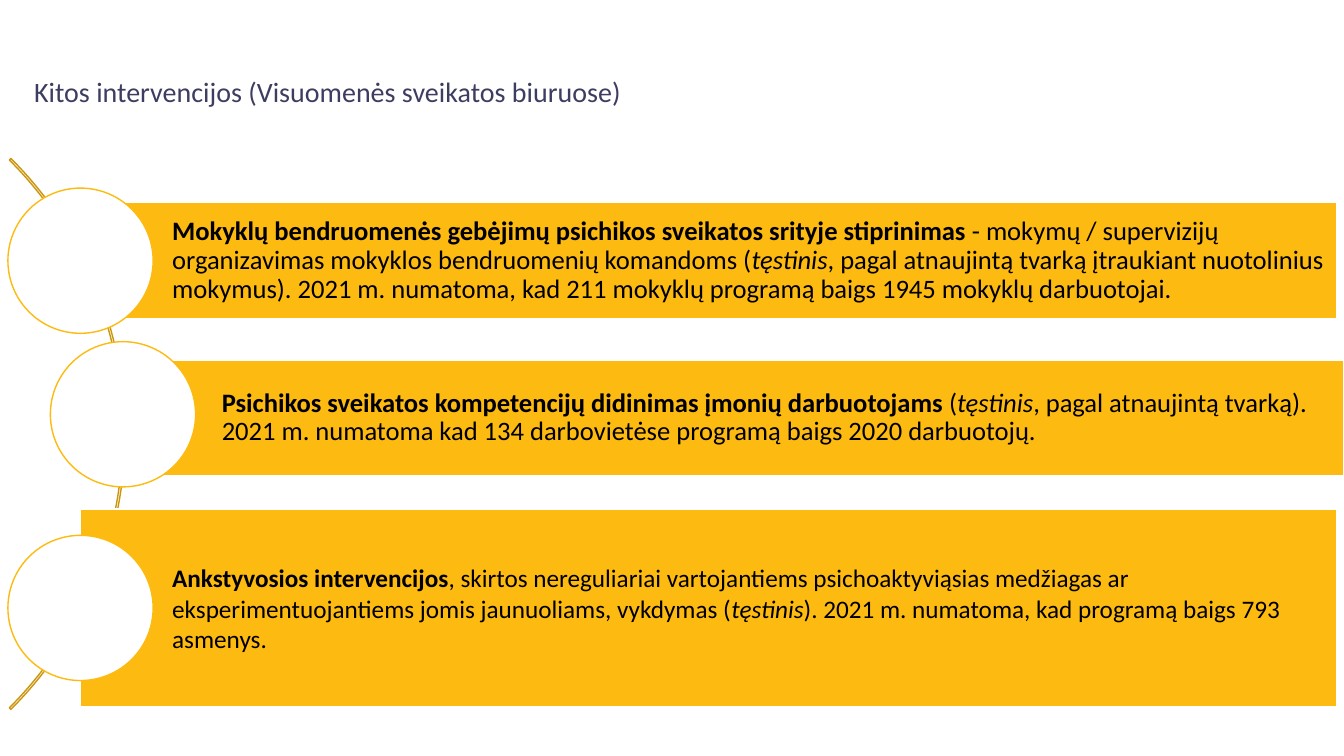
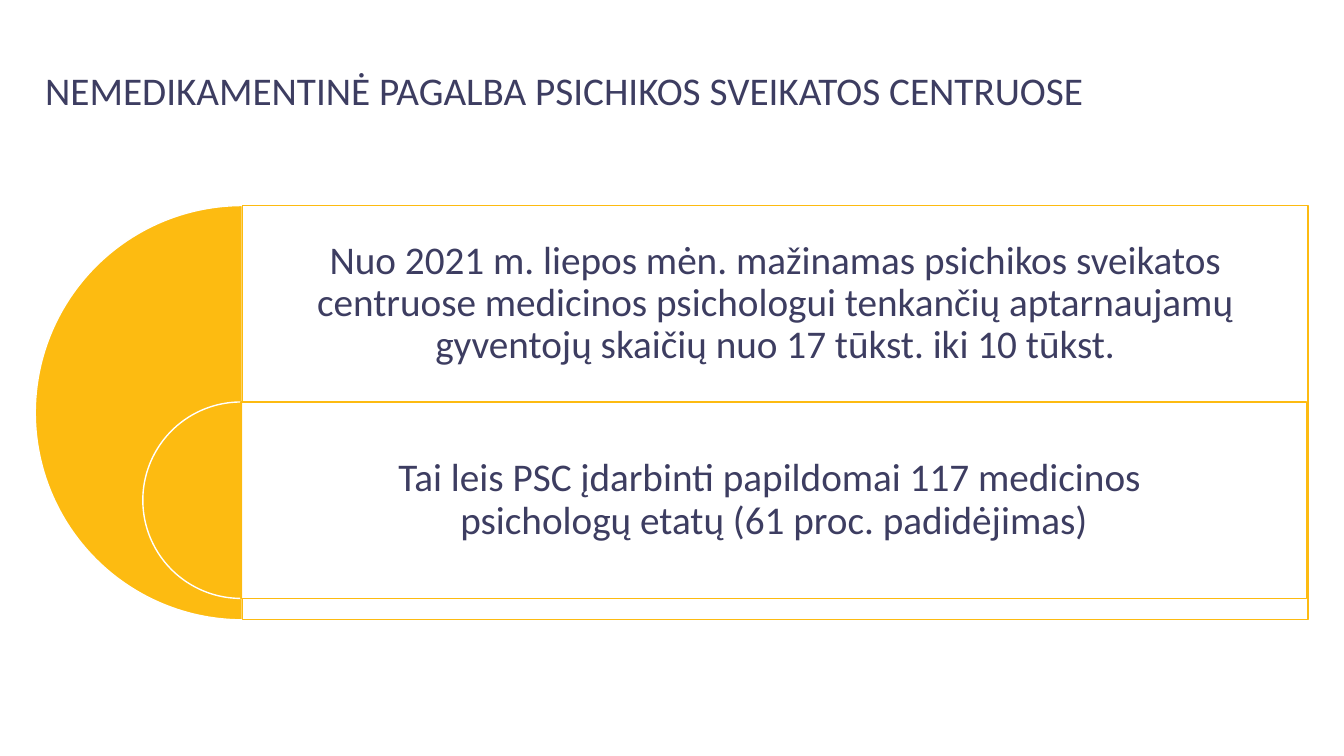
from lxml import etree
from pptx import Presentation
from pptx.dml.color import RGBColor
from pptx.enum.shapes import MSO_SHAPE
from pptx.enum.text import MSO_ANCHOR, PP_ALIGN
from pptx.oxml.ns import qn
from pptx.util import Cm, Pt

ARC = MSO_SHAPE.BLOCK_ARC
PIE = MSO_SHAPE.PIE
RECT = MSO_SHAPE.RECTANGLE
OVAL = MSO_SHAPE.OVAL
TOP = MSO_ANCHOR.TOP
MID = MSO_ANCHOR.MIDDLE
LEFT = PP_ALIGN.LEFT
MIDDLE = PP_ALIGN.CENTER

GOLD = RGBColor(0xFD, 0xBB, 0x11)
OCHRE = RGBColor(0xCB, 0x96, 0x0E)
NAVY = RGBColor(0x3D, 0x3D, 0x61)
BLACK = RGBColor(0, 0, 0)
WHITE = RGBColor(0xFF, 0xFF, 0xFF)
FONT = "Calibri"
WIDE, HIGH = 33.87, 19.05
BOLD, ITALIC = "b", "i"


def place(box):
    return [Cm(side) for side in box]


def add_form(slide, kind, box, fill, line, turns=()):
    form = slide.shapes.add_shape(kind, *place(box))
    form.shadow.inherit = False
    for at, turn in enumerate(turns):
        form.adjustments[at] = turn
    if fill is None:
        form.fill.background()
    else:
        form.fill.solid()
        form.fill.fore_color.rgb = fill
    form.line.color.rgb = line
    form.line.width = Pt(1)
    return form


def write(shape, runs, size, color, align=LEFT, anchor=MID,
          pads=(0.25, 0.13, 0.25, 0.13), space=0.9):
    frame = shape.text_frame
    frame.word_wrap = True
    frame.vertical_anchor = anchor
    (frame.margin_left, frame.margin_top,
     frame.margin_right, frame.margin_bottom) = place(pads)
    para = frame.paragraphs[0]
    para.alignment = align
    para.line_spacing = space
    for text, style in runs:
        if text == "\n":
            para.add_line_break()
            continue
        run = para.add_run()
        run.text = text
        font = run.font
        font.name = FONT
        font.size = Pt(size)
        font.color.rgb = color
        font.bold = style == BOLD
        font.italic = style == ITALIC


def add_title(slide, box, text, size, anchor=MID):
    label = slide.shapes.add_textbox(*place(box))
    write(label, [(text, "")], size, NAVY, anchor=anchor)


def add_bar(slide, box, runs, size, space, shift=(0, 0)):
    left, top, wide, high = box
    bar = add_form(slide, RECT, box, GOLD, WHITE)
    write(bar, runs, size, BLACK, pads=(2.31, 0.13, 0.13, 0.13), space=space)
    disc = 3.66
    spot = (left - disc / 2 + shift[0],
            top + (high - disc) / 2 + shift[1], disc, disc)
    add_form(slide, OVAL, spot, WHITE, GOLD)


def add_level(slide, left, top, side, runs):
    add_form(slide, PIE, (left, top, side, side), GOLD, WHITE, (54, 162))
    panel = add_form(slide, RECT, (left + side / 2, top, 26.85, side),
                     WHITE, GOLD)
    tint = panel.fill._xPr.find(qn("a:solidFill"))[0]
    etree.SubElement(tint, qn("a:alpha")).set("val", "90000")
    pad, depth = 0.3, 4.95
    write(panel, runs, 28, NAVY, MIDDLE,
          pads=(pad, pad, pad, pad + side - depth))


def build_list(slide):
    add_form(slide, ARC, (-16.48, 1.12, 19.63, 19.63), None, OCHRE,
             (189, 27, 0.00279))
    add_bar(slide, (2.03, 5.11, 31.65, 2.92), [
        ("Mokyklų bendruomenės gebėjimų psichikos sveikatos srityje "
         "stiprinimas", BOLD),
        (" - mokymų / supervizijų organizavimas mokyklos bendruomenių "
         "komandoms (", ""),
        ("tęstinis", ITALIC),
        (", pagal atnaujintą tvarką įtraukiant nuotolinius mokymus). "
         "2021 m. numatoma, kad 211 mokyklų programą baigs 1945 mokyklų "
         "darbuotojai.", ""),
    ], 19, 0.9)
    add_bar(slide, (3.28, 9.07, WIDE - 3.28, 2.92), [
        ("Psichikos sveikatos kompetencijų didinimas įmonių darbuotojams",
         BOLD),
        (" (", ""),
        ("tęstinis", ITALIC),
        (", pagal atnaujintą tvarką). 2021 m. numatoma kad 134 "
         "darbovietėse programą baigs 2020 darbuotojų.", ""),
    ], 19, 0.9, (-0.18, -0.09))
    add_bar(slide, (2.03, 12.83, 31.65, 4.98), [
        ("Ankstyvosios intervencijos", BOLD),
        (", skirtos nereguliariai vartojantiems psichoaktyviąsias medžiagas "
         "ar eksperimentuojantiems jomis jaunuoliams, vykdymas (", ""),
        ("tęstinis", ITALIC),
        ("). 2021 m. numatoma, kad programą baigs 793 asmenys.", ""),
    ], 18, 1.0)
    add_title(slide, (0.61, 1.09, 32.08, 2.54),
              "Kitos intervencijos (Visuomenės sveikatos biuruose)", 20)


def build_levels(slide):
    add_level(slide, 0.89, 5.18, 10.44, [
        ("Nuo 2021 m. liepos mėn. mažinamas psichikos sveikatos centruose "
         "medicinos psichologui tenkančių aptarnaujamų gyventojų skaičių "
         "nuo 17 tūkst. iki 10 tūkst.", ""),
    ])
    add_level(slide, 3.6, 10.13, 4.95, [
        ("Tai leis PSC įdarbinti papildomai 117 medicinos ", ""),
        ("\n", ""),
        ("psichologų etatų (61 proc. padidėjimas)", ""),
    ])
    add_title(slide, (0.89, 1.68, 32.08, 2.46),
              "NEMEDIKAMENTINĖ PAGALBA PSICHIKOS SVEIKATOS CENTRUOSE",
              28, TOP)


def main():
    deck = Presentation()
    deck.slide_width, deck.slide_height = place((WIDE, HIGH))
    for build in (build_list, build_levels):
        build(deck.slides.add_slide(deck.slide_layouts[6]))
    deck.save("out.pptx")


if __name__ == "__main__":
    main()
